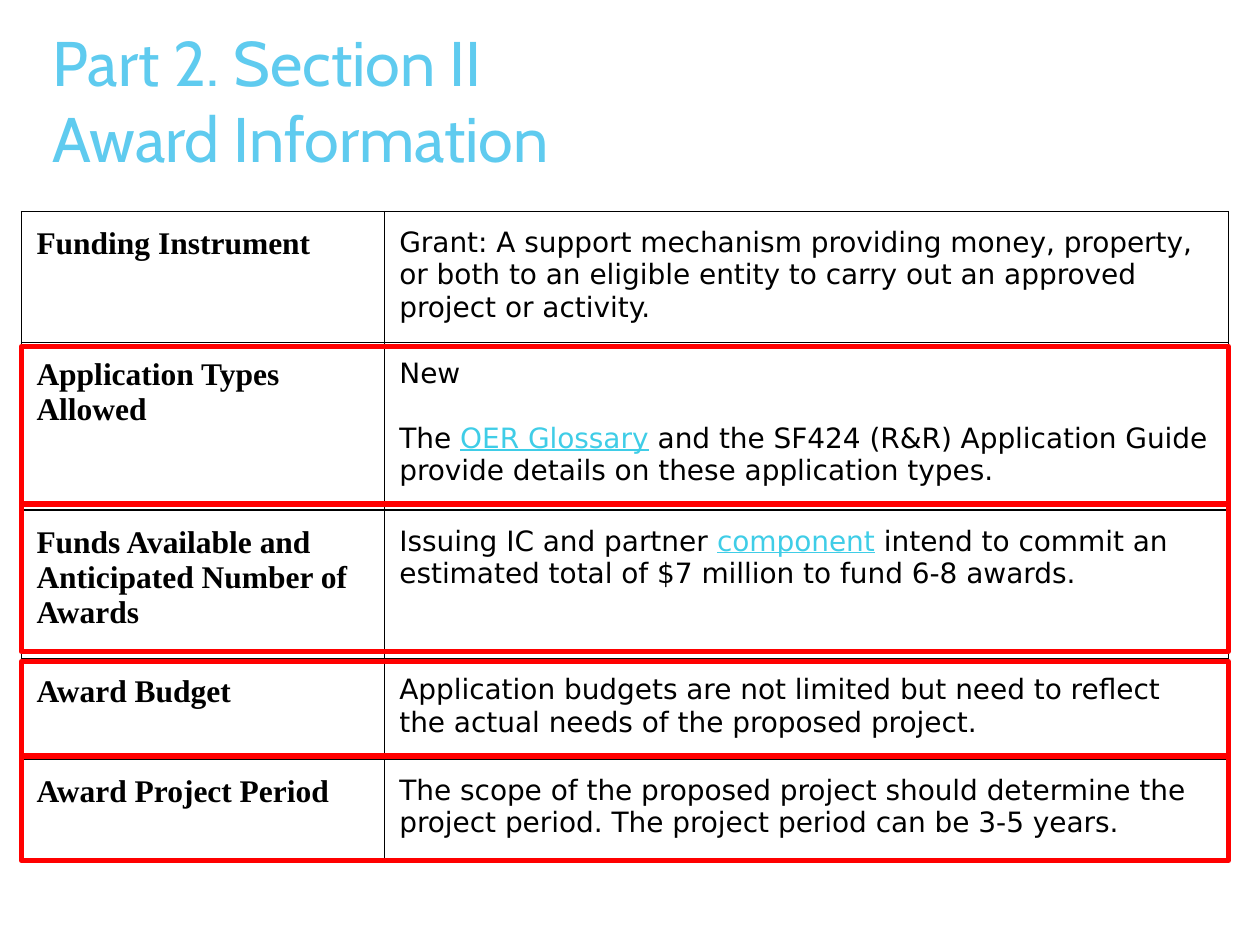
import pptx
import pptx.dml.color
import pptx.enum.shapes
import pptx.enum.text
import pptx.oxml.ns
import pptx.util
from lxml import etree

COLORS = {"title": "5FCBEF", "text": "000000", "link": "3FCDE7", "frame": "FF0000"}
WIDTH, HEIGHT = 10, 7.5
TABLE_LEFT, TABLE_TOP = 0.17, 1.68
COLUMNS = [2.88, 6.7]
ROWS = [
    (0.8, "Funding Instrument", [[
        ("Grant: A support mechanism providing money, property, or both to an "
         "eligible entity to carry out an approved project or activity.", "text")]]),
    (1.33, "Application Types Allowed", [
        [("New", "text")],
        [("The ", "text"), ("OER Glossary", "link"),
         (" and the SF424 (R&R) Application Guide provide details on these "
          "application types.", "text")]]),
    (1.18, "Funds Available and Anticipated Number of Awards", [[
        ("Issuing IC and partner ", "text"), ("component", "link"),
        (" intend to commit an estimated total of $7 million to fund 6-8 awards.", "text")]]),
    (0.8, "Award Budget", [[
        ("Application budgets are not limited but need to reflect the actual "
         "needs of the proposed project.", "text")]]),
    (0.8, "Award Project Period", [[
        ("The scope of the proposed project should determine the project period. "
         "The project period can be 3-5 years.", "text")]]),
]
FRAMES = [(2.75, 1.25), (4, 1.17), (5.25, 0.75), (6, 0.83)]


def inches(*lengths):
    """Convert lengths to inches."""
    return [pptx.util.Inches(length) for length in lengths]


def color(name):
    """Return the named colour."""
    return pptx.dml.color.RGBColor.from_string(COLORS[name])


def add_run(paragraph, text, font, size, color_name, bold=False):
    """Add one formatted run."""
    run = paragraph.add_run()
    run.text = text
    run.font.name = font
    run.font.size = pptx.util.Pt(size)
    run.font.bold = bold
    run.font.underline = color_name == "link"
    run.font.color.rgb = color(color_name)


def add_title(slide, lines):
    """Add the title, one line break between its lines."""
    box = slide.shapes.add_textbox(*inches(0.32, 0.14, 6.94, 1.44))
    box.text_frame.word_wrap = True
    paragraph = box.text_frame.paragraphs[0]
    for index, line in enumerate(lines):
        if index:
            paragraph.add_line_break()
        add_run(paragraph, line, "Cabin", 36, "title")


def format_cell(cell):
    """Set margins, thin borders and no fill."""
    cell.margin_left = cell.margin_right = pptx.util.Inches(0.12)
    cell.margin_top = cell.margin_bottom = pptx.util.Inches(0.12)
    cell.vertical_anchor = pptx.enum.text.MSO_ANCHOR.TOP
    properties = cell._tc.get_or_add_tcPr()
    qualify = pptx.oxml.ns.qn
    for side in "LRTB":
        line = etree.SubElement(properties, qualify(f"a:ln{side}"), w=str(pptx.util.Pt(1)))
        fill = etree.SubElement(line, qualify("a:solidFill"))
        etree.SubElement(fill, qualify("a:srgbClr"), val=COLORS["text"])
    cell.fill.background()


def fill_cell(cell, paragraphs, font, size, bold=False):
    """Write paragraphs of runs, set apart by one line."""
    format_cell(cell)
    for index, runs in enumerate(paragraphs):
        paragraph = cell.text_frame.paragraphs[0]
        if index:
            paragraph = cell.text_frame.add_paragraph()
            paragraph.space_before = pptx.util.Pt(18.6)
        for text, color_name in runs:
            add_run(paragraph, text, font, size, color_name, bold)


def add_award_table(slide):
    """Add the table of award terms."""
    height = sum(row[0] for row in ROWS)
    table = slide.shapes.add_table(
        len(ROWS), len(COLUMNS),
        *inches(TABLE_LEFT, TABLE_TOP, sum(COLUMNS), height)).table
    table.first_row = table.horz_banding = False
    for column, width in zip(table.columns, COLUMNS):
        column.width = pptx.util.Inches(width)
    for row, (row_height, label, details) in zip(table.rows, ROWS):
        row.height = pptx.util.Inches(row_height)
        fill_cell(row.cells[0], [[(label, "text")]], "Times New Roman", 18, True)
        fill_cell(row.cells[1], details, "DejaVu Sans", 16)


def add_frame(slide, top, height):
    """Outline a table row in red."""
    frame = slide.shapes.add_shape(
        pptx.enum.shapes.MSO_SHAPE.RECTANGLE,
        *inches(TABLE_LEFT, top, sum(COLUMNS), height))
    frame.shadow.inherit = False
    frame.fill.background()
    frame.line.color.rgb = color("frame")
    frame.line.width = pptx.util.Pt(3)


def main():
    """Build and save the slide."""
    presentation = pptx.Presentation()
    presentation.slide_width, presentation.slide_height = inches(WIDTH, HEIGHT)
    slide = presentation.slides.add_slide(presentation.slide_layouts[6])
    add_title(slide, ["Part 2. Section II", "Award Information"])
    add_award_table(slide)
    for top, height in FRAMES:
        add_frame(slide, top, height)
    presentation.save("out.pptx")


if __name__ == "__main__":
    main()
